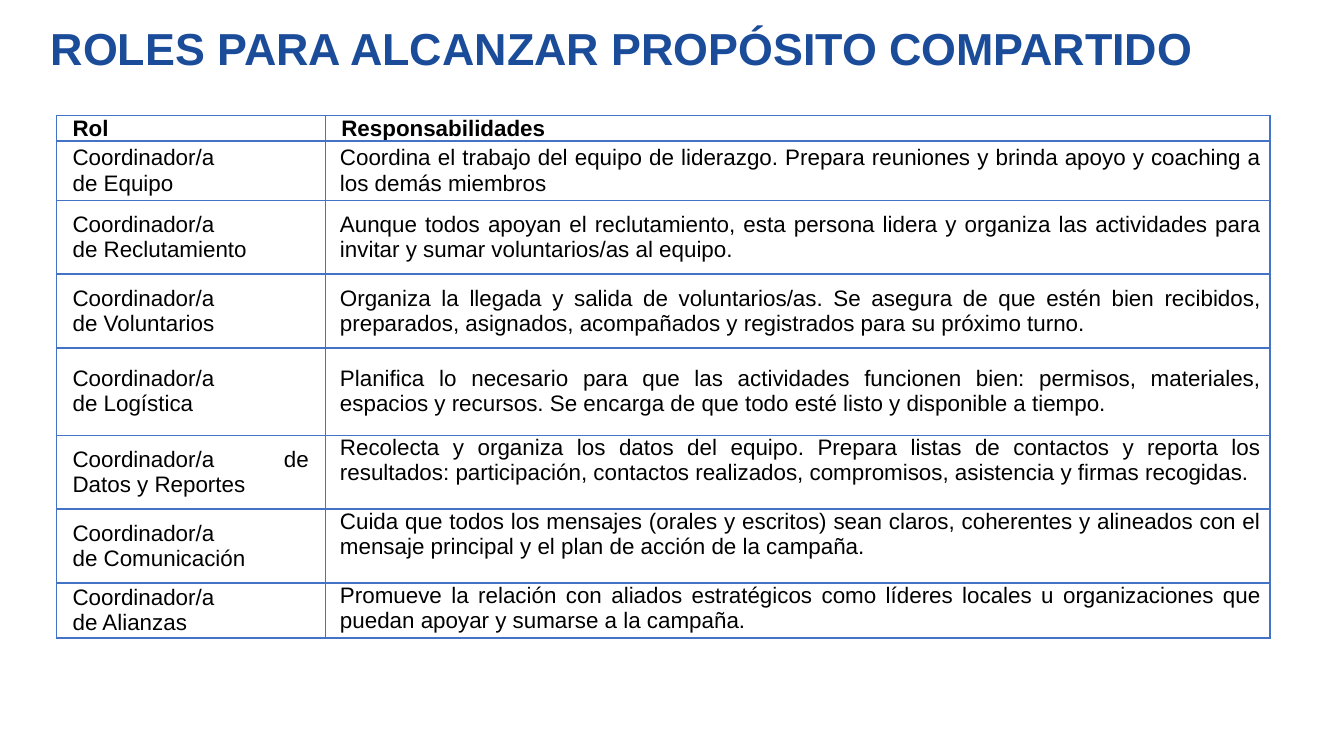
"""Builds the slide on team roles and their responsibilities."""
import dataclasses

import lxml.etree
import pptx
import pptx.dml.color
import pptx.enum.text
import pptx.oxml.ns
import pptx.util

ALIGN = pptx.enum.text.PP_ALIGN
ANCHOR = pptx.enum.text.MSO_ANCHOR


@dataclasses.dataclass(frozen=True)
class Theme:
    """Colours, type sizes and insets of the slide."""
    font: str = "Arial"
    title_color: str = "1A4C99"
    text_color: str = "000000"
    border_color: str = "4472C4"
    title_size: float = 24
    body_size: float = 12
    border_width: float = 0.75
    cell_inset: float = 0.05


THEME = Theme()
SLIDE_SIZE = (10, 10 * 9 / 16)
TITLE_BOX = (0.22, -0.09, 8.81, 0.94)
TABLE_BOX = (0.42, 0.86, 9.03, 3.89)
COLUMN_SHARES = (2, 7.03)
ROW_SHARES = (0.19, 0.44, 0.55, 0.55, 0.65, 0.55, 0.55, 0.41)
ROLE_INDENTS = (0.07, 0.07)
DUTY_INDENTS = (0.06, 0.01)
FIRST_TOP_ROW = 5

HEADINGS = ("Rol", "Responsabilidades")
ROLES = (
    ("Coordinador/a \nde Equipo ",
     "Coordina el trabajo del equipo de liderazgo. Prepara reuniones y brinda "
     "apoyo y coaching a los demás miembros"),
    ("Coordinador/a \nde Reclutamiento ",
     "Aunque todos apoyan el reclutamiento, esta persona lidera y organiza las "
     "actividades para invitar y sumar voluntarios/as al equipo."),
    ("Coordinador/a \nde Voluntarios",
     "Organiza la llegada y salida de voluntarios/as. Se asegura de que estén bien "
     "recibidos, preparados, asignados, acompañados y registrados para su próximo turno."),
    ("Coordinador/a \nde Logística",
     "Planifica lo necesario para que las actividades funcionen bien: permisos, "
     "materiales, espacios y recursos. Se encarga de que todo esté listo y disponible "
     "a tiempo."),
    ("Coordinador/a de Datos y Reportes",
     "Recolecta y organiza los datos del equipo. Prepara listas de contactos y reporta "
     "los resultados: participación, contactos realizados, compromisos, asistencia y "
     "firmas recogidas."),
    ("Coordinador/a \nde Comunicación",
     "Cuida que todos los mensajes (orales y escritos) sean claros, coherentes y "
     "alineados con el mensaje principal y el plan de acción de la campaña."),
    ("Coordinador/a \nde Alianzas",
     "Promueve la relación con aliados estratégicos como líderes locales u "
     "organizaciones que puedan apoyar y sumarse a la campaña."),
)


def to_emu(box):
    """Convert a box in inches to lengths."""
    return [pptx.util.Inches(length) for length in box]


def set_font(paragraph, size, color, bold):
    """Give a paragraph its typeface, size, colour and weight."""
    paragraph.font.name = THEME.font
    paragraph.font.size = pptx.util.Pt(size)
    paragraph.font.bold = bold
    paragraph.font.color.rgb = pptx.dml.color.RGBColor.from_string(color)


def add_title(slide, box, wording):
    """Place and format the title placeholder in the box."""
    title = slide.shapes.title
    title.left, title.top, title.width, title.height = to_emu(box)
    frame = title.text_frame
    frame.text = wording
    frame.word_wrap = True
    frame.vertical_anchor = ANCHOR.MIDDLE
    heading = frame.paragraphs[0]
    heading.alignment = ALIGN.CENTER
    heading.line_spacing = 0.9
    set_font(heading, THEME.title_size, THEME.title_color, True)


def add_borders(cell):
    """Draw a thin line on all four sides of a cell, ahead of its fill."""
    properties = cell._tc.get_or_add_tcPr()
    qn = pptx.oxml.ns.qn
    for position, side in enumerate(("a:lnL", "a:lnR", "a:lnT", "a:lnB")):
        line = lxml.etree.Element(qn(side), w=str(pptx.util.Pt(THEME.border_width)))
        fill = lxml.etree.SubElement(line, qn("a:solidFill"))
        lxml.etree.SubElement(fill, qn("a:srgbClr"), val=THEME.border_color)
        properties.insert(position, line)


def fill_cell(cell, wording, indents, anchor, bold):
    """Write justified, indented text in a bordered cell."""
    cell.text = wording
    cell.vertical_anchor = anchor
    cell.margin_left = cell.margin_right = pptx.util.Inches(THEME.cell_inset)
    cell.margin_top = cell.margin_bottom = 0
    cell.fill.background()
    add_borders(cell)
    for paragraph in cell.text_frame.paragraphs:
        paragraph.alignment = ALIGN.JUSTIFY
        properties = paragraph._p.get_or_add_pPr()
        for side, indent in zip(("marL", "marR"), indents):
            properties.set(side, str(pptx.util.Inches(indent)))
        set_font(paragraph, THEME.body_size, THEME.text_color, bold)


def add_roles_table(slide, box, headings, roles):
    """Place the table of roles, sharing the box out over columns and rows."""
    entries = (headings, *roles)
    left, top, width, height = to_emu(box)
    table = slide.shapes.add_table(
        len(entries), len(headings), left, top, width, height).table
    table.first_row = table.horz_banding = False
    for column, share in zip(table.columns, COLUMN_SHARES):
        column.width = int(width * share / sum(COLUMN_SHARES))
    for row, share in zip(table.rows, ROW_SHARES):
        row.height = int(height * share / sum(ROW_SHARES))
    for index, (role, duty) in enumerate(entries):
        is_heading = index == 0
        duty_anchor = ANCHOR.TOP if index >= FIRST_TOP_ROW else ANCHOR.MIDDLE
        duty_indents = ROLE_INDENTS if is_heading else DUTY_INDENTS
        fill_cell(table.cell(index, 0), role, ROLE_INDENTS, ANCHOR.MIDDLE, is_heading)
        fill_cell(table.cell(index, 1), duty, duty_indents, duty_anchor, is_heading)


def main():
    """Build and save the presentation."""
    presentation = pptx.Presentation()
    presentation.slide_width, presentation.slide_height = to_emu(SLIDE_SIZE)
    slide = presentation.slides.add_slide(presentation.slide_layouts[5])
    add_title(slide, TITLE_BOX, "ROLES PARA ALCANZAR PROPÓSITO COMPARTIDO")
    add_roles_table(slide, TABLE_BOX, HEADINGS, ROLES)
    presentation.save("out.pptx")


if __name__ == "__main__":
    main()
